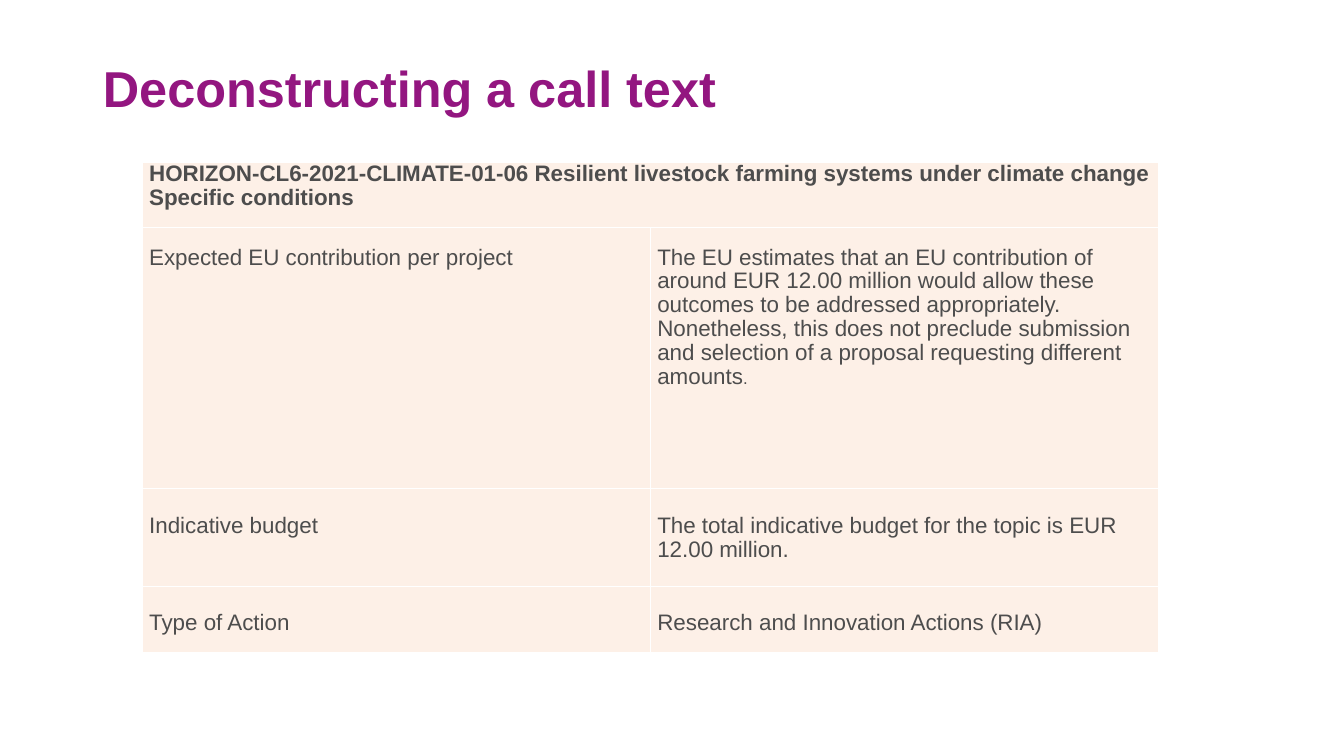
import pptx
import pptx.util
import pptx.dml.color
import pptx.enum.text
import pptx.oxml.ns
from lxml import etree

Inches, Pt = pptx.util.Inches, pptx.util.Pt
RGBColor = pptx.dml.color.RGBColor

PURPLE = RGBColor(0x93, 0x16, 0x80)
GREY = RGBColor(0x4D, 0x4D, 0x4D)
PEACH = RGBColor(0xFD, 0xF0, 0xE7)
WHITE = RGBColor(0xFF, 0xFF, 0xFF)

FONT = "Arial"
LINE_SPACING = 0.96
ROW_HEIGHTS = (0.65, 2.59, 0.97, 0.65)

HEADING = (
    "HORIZON-CL6-2021-CLIMATE-01-06 Resilient livestock farming systems under climate change",
    "Specific conditions",
)
# Label, condition, gap above the text in inches
CONDITIONS = (
    ("Expected EU contribution per project",
     "The EU estimates that an EU contribution of around EUR 12.00 million would allow "
     "these outcomes to be addressed appropriately. Nonetheless, this does not preclude "
     "submission and selection of a proposal requesting different amounts", 0.18),
    ("Indicative budget",
     "The total indicative budget for the topic is EUR 12.00 million.", 0.25),
    ("Type of Action", "Research and Innovation Actions (RIA)", 0.25),
)


def style_font(font, size, color, bold=False):
    font.name, font.size, font.bold = FONT, Pt(size), bold
    font.color.rgb = color


def add_title(slide, text, left, top, width, height):
    title = slide.shapes.title
    title.left, title.top = Inches(left), Inches(top)
    title.width, title.height = Inches(width), Inches(height)
    frame = title.text_frame
    frame.text = text
    frame.word_wrap = True
    frame.auto_size = pptx.enum.text.MSO_AUTO_SIZE.NONE
    frame.vertical_anchor = pptx.enum.text.MSO_ANCHOR.BOTTOM
    frame.margin_left = frame.margin_right = Inches(0.1)
    frame.margin_top, frame.margin_bottom = Inches(0.05), 0
    heading = frame.paragraphs[0]
    heading.alignment = pptx.enum.text.PP_ALIGN.LEFT
    heading.line_spacing = 1.0
    style_font(heading.font, 36, PURPLE, bold=True)


def add_borders(cell):
    """Draw a thin white line on each side of the cell, ahead of its fill."""
    properties = cell._tc.get_or_add_tcPr()
    for position, side in enumerate(("lnL", "lnR", "lnT", "lnB")):
        line = etree.Element(pptx.oxml.ns.qn(f"a:{side}"), w=str(Pt(1)))
        fill = etree.SubElement(line, pptx.oxml.ns.qn("a:solidFill"))
        etree.SubElement(fill, pptx.oxml.ns.qn("a:srgbClr"), val=str(WHITE))
        properties.insert(position, line)


def fill_cell(cell, lines, gap=0, bold=False):
    cell.margin_left = cell.margin_right = Inches(0.07)
    cell.margin_top, cell.margin_bottom = Inches(gap), 0
    cell.vertical_anchor = pptx.enum.text.MSO_ANCHOR.TOP
    cell.text = "\n".join(lines)
    for paragraph in cell.text_frame.paragraphs:
        paragraph.line_spacing = LINE_SPACING
        style_font(paragraph.font, 16, GREY, bold)


def add_conditions_table(slide, left, top, width):
    table = slide.shapes.add_table(
        len(ROW_HEIGHTS), 2, Inches(left), Inches(top),
        Inches(width), Inches(sum(ROW_HEIGHTS))).table
    table.first_row = table.horz_banding = False
    for column in table.columns:
        column.width = Inches(width / 2)
    for row, height in zip(table.rows, ROW_HEIGHTS):
        row.height = Inches(height)
    for cell in table.iter_cells():
        cell.fill.solid()
        cell.fill.fore_color.rgb = PEACH
        add_borders(cell)

    # Heading across both columns
    table.cell(0, 0).merge(table.cell(0, 1))
    fill_cell(table.cell(0, 0), HEADING, bold=True)

    # One row per condition
    for row, (label, condition, gap) in enumerate(CONDITIONS, start=1):
        fill_cell(table.cell(row, 0), [label], gap)
        fill_cell(table.cell(row, 1), [condition], gap)

    # The contribution text closes with a smaller full stop
    full_stop = table.cell(1, 1).text_frame.paragraphs[0].add_run()
    full_stop.text = "."
    style_font(full_stop.font, 12, GREY)


def main():
    deck = pptx.Presentation()
    deck.slide_width, deck.slide_height = Inches(13.33), Inches(7.5)
    slide = deck.slides.add_slide(deck.slide_layouts[5])
    add_title(slide, "Deconstructing a call text", 0.92, 0.51, 11.5, 0.66)
    add_conditions_table(slide, 1.41, 1.61, 10.08)
    deck.save("out.pptx")


if __name__ == "__main__":
    main()
